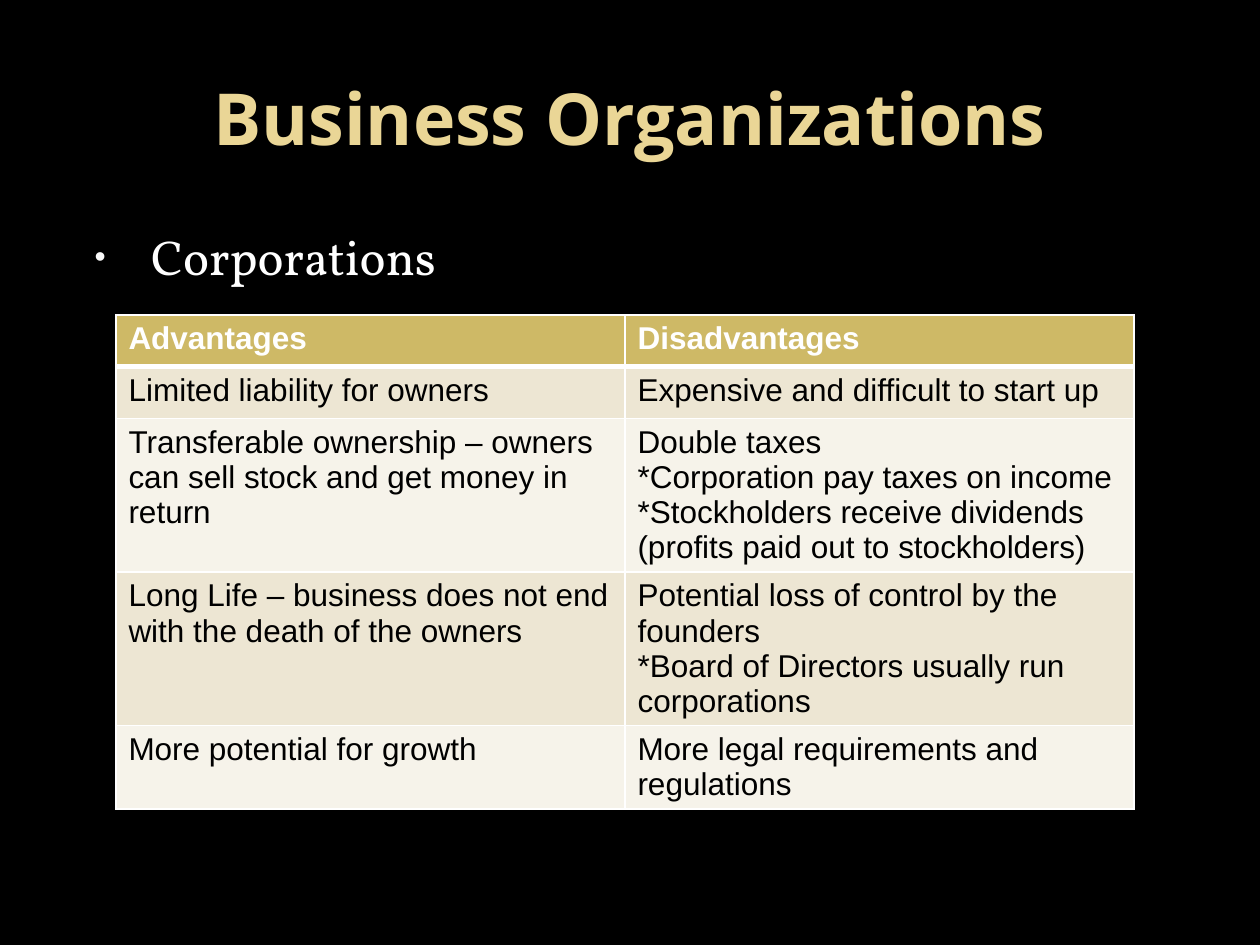
from lxml import etree
from pptx import Presentation
from pptx.dml.color import RGBColor
from pptx.enum.text import MSO_ANCHOR, PP_ALIGN
from pptx.oxml.ns import qn
from pptx.util import Inches, Pt

CENTER = PP_ALIGN.CENTER
TOP, MIDDLE = MSO_ANCHOR.TOP, MSO_ANCHOR.MIDDLE

BLACK = RGBColor(0x00, 0x00, 0x00)
WHITE = RGBColor(0xFF, 0xFF, 0xFF)
BULLET_WHITE = RGBColor(0xF9, 0xF9, 0xF9)
TITLE_GOLD = RGBColor(0xEA, 0xD6, 0x96)
HEADER_GOLD = RGBColor(0xCE, 0xB9, 0x66)
BAND_DARK = RGBColor(0xED, 0xE6, 0xD3)
BAND_LIGHT = RGBColor(0xF6, 0xF3, 0xEA)

SLIDE_WIDTH, SLIDE_HEIGHT = 10, 7.5
MARGIN = 0.05 * SLIDE_WIDTH
CONTENT_WIDTH = SLIDE_WIDTH - 2 * MARGIN
TITLE_BOX = (MARGIN, 0.04 * SLIDE_HEIGHT, CONTENT_WIDTH, 1.25)
BODY_BOX = (MARGIN, 1.75, CONTENT_WIDTH, 5.15)
TABLE_BOX = (0.92, SLIDE_HEIGHT / 3, 8.08, 2.05)

ROWS = [
    ("Advantages", "Disadvantages"),
    ("Limited liability for owners", "Expensive and difficult to start up"),
    ("Transferable ownership – owners can sell stock and get money in return",
     "Double taxes\n*Corporation pay taxes on income\n"
     "*Stockholders receive dividends (profits paid out to stockholders)"),
    ("Long Life – business does not end with the death of the owners",
     "Potential loss of control by the founders\n"
     "*Board of Directors usually run corporations"),
    ("More potential for growth", "More legal requirements and regulations"),
]


def place(shape, box):
    shape.left, shape.top, shape.width, shape.height = map(Inches, box)


def format_text(text_frame, font_name, size, color, bold=False):
    for paragraph in text_frame.paragraphs:
        for run in paragraph.runs:
            run.font.name = font_name
            run.font.size = Pt(size)
            run.font.bold = bold
            run.font.color.rgb = color


def add_bullet(paragraph, indent, hanging):
    properties = paragraph._p.get_or_add_pPr()
    properties.set("marL", str(Inches(indent)))
    properties.set("indent", str(-Inches(hanging)))
    color = etree.SubElement(properties, qn("a:buClr"))
    etree.SubElement(color, qn("a:srgbClr"), val=str(BULLET_WHITE))
    etree.SubElement(properties, qn("a:buSzPct"), val="65000")
    etree.SubElement(properties, qn("a:buFont"), typeface="Arial")
    etree.SubElement(properties, qn("a:buChar"), char="•")


def add_borders(cell, bottom_width):
    properties = cell._tc.get_or_add_tcPr()
    widths = {"a:lnL": 1, "a:lnR": 1, "a:lnT": 1, "a:lnB": bottom_width}
    for position, (side, width) in enumerate(widths.items()):
        line = etree.Element(qn(side), w=str(Pt(width)))
        fill = etree.SubElement(line, qn("a:solidFill"))
        etree.SubElement(fill, qn("a:srgbClr"), val=str(WHITE))
        properties.insert(position, line)


def build_title(title, box):
    place(title, box)
    text_frame = title.text_frame
    text_frame.text = "Business Organizations"
    text_frame.vertical_anchor = MIDDLE
    text_frame.paragraphs[0].alignment = CENTER
    format_text(text_frame, "Open Sans", 41, TITLE_GOLD, bold=True)


def build_body(body, box):
    place(body, box)
    text_frame = body.text_frame
    text_frame.text = "Corporations"
    text_frame.vertical_anchor = TOP
    paragraph = text_frame.paragraphs[0]
    paragraph.space_before = Pt(5.6)
    add_bullet(paragraph, indent=0.6, hanging=0.45)
    format_text(text_frame, "Vollkorn", 28, WHITE)


def build_table(slide, box):
    table = slide.shapes.add_table(len(ROWS), len(ROWS[0]), *map(Inches, box)).table
    for row_index, row in enumerate(ROWS):
        is_header = row_index == 0
        band = BAND_DARK if row_index % 2 else BAND_LIGHT
        for column_index, text in enumerate(row):
            cell = table.cell(row_index, column_index)
            cell.text_frame.text = text
            format_text(cell.text_frame, "Arial", 18,
                        WHITE if is_header else BLACK, bold=is_header)
            cell.fill.solid()
            cell.fill.fore_color.rgb = HEADER_GOLD if is_header else band
            add_borders(cell, bottom_width=3 if is_header else 1)


def main():
    presentation = Presentation()
    presentation.slide_width = Inches(SLIDE_WIDTH)
    presentation.slide_height = Inches(SLIDE_HEIGHT)
    slide = presentation.slides.add_slide(presentation.slide_layouts[1])

    # Background
    slide.background.fill.solid()
    slide.background.fill.fore_color.rgb = BLACK

    # Title, list and comparison table
    build_title(slide.shapes.title, TITLE_BOX)
    build_body(slide.placeholders[1], BODY_BOX)
    build_table(slide, TABLE_BOX)

    presentation.save("out.pptx")


if __name__ == "__main__":
    main()
